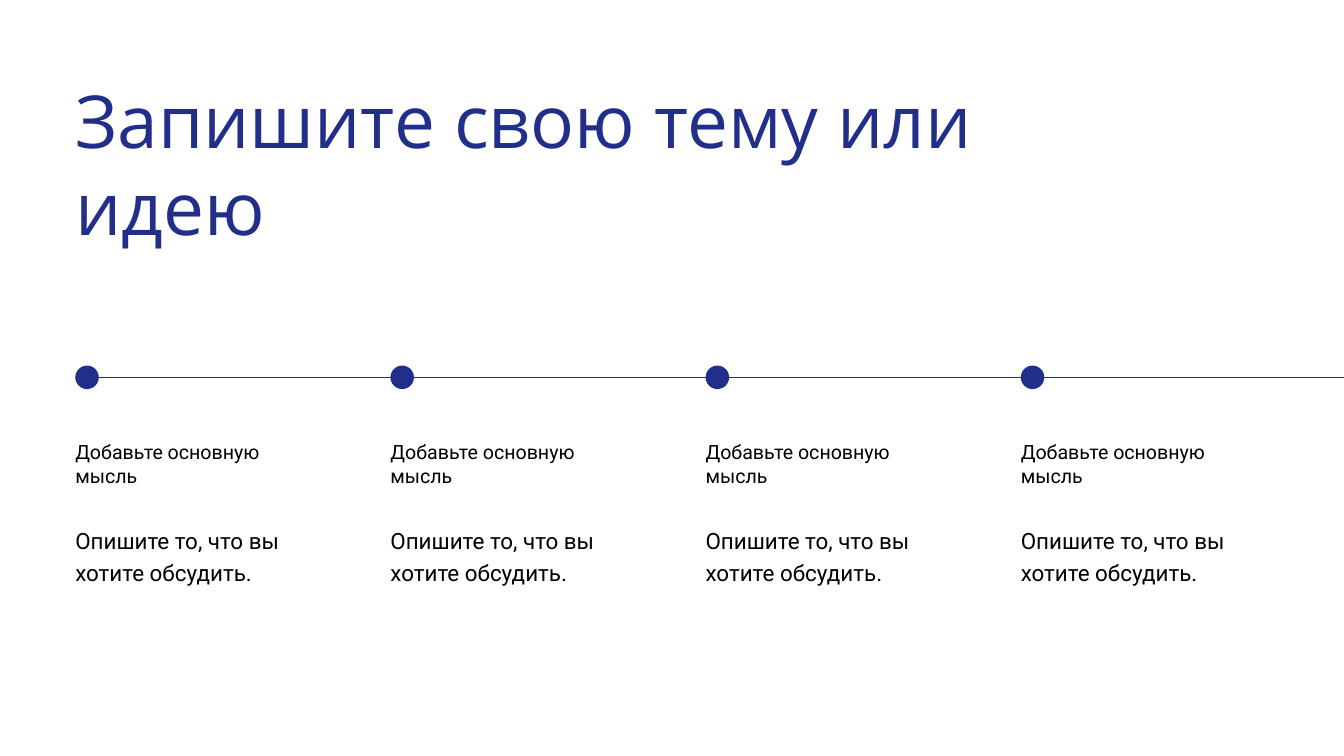
from dataclasses import dataclass

from lxml import etree
from pptx import Presentation
from pptx.dml.color import RGBColor
from pptx.enum.shapes import MSO_CONNECTOR, MSO_SHAPE
from pptx.enum.text import MSO_ANCHOR, MSO_AUTO_SIZE, PP_ALIGN
from pptx.oxml.ns import qn
from pptx.util import Inches, Pt

STRAIGHT = MSO_CONNECTOR.STRAIGHT
OVAL = MSO_SHAPE.OVAL
TOP = MSO_ANCHOR.TOP
NO_AUTOFIT = MSO_AUTO_SIZE.NONE
LEFT = PP_ALIGN.LEFT


@dataclass(frozen=True)
class Theme:
    """Colours, fonts and type sizes of the slide."""
    accent: RGBColor = RGBColor(0x21, 0x2F, 0x8A)
    text: RGBColor = RGBColor(0, 0, 0)
    background: RGBColor = RGBColor(255, 255, 255)
    title_font: str = "Open Sans"
    body_font: str = "Roboto"
    title_size: float = 78.2
    title_leading: float = 93.8
    heading_size: float = 21
    heading_leading: float = 25.2
    detail_size: float = 24
    detail_leading: float = 33.6
    line_width: float = 0.75


THEME = Theme()
SLIDE_W, SLIDE_H = 20, 11.25
MARGIN = 1.12
COLUMN_STEP, COLUMN_W = 4.69, 3.68
DOT = 0.35
STEPS = [("Добавьте основную мысль", "Опишите то, что вы хотите обсудить.")] * 4


def write_text(sp, text, *, font, size, leading, color):
    """Fill a shape with one formatted paragraph and no inner margins."""
    tf = sp.text_frame
    tf.word_wrap = True
    tf.auto_size = NO_AUTOFIT
    tf.vertical_anchor = TOP
    tf.margin_left = tf.margin_right = tf.margin_top = tf.margin_bottom = 0
    p = tf.paragraphs[0]
    p.alignment = LEFT
    p.line_spacing = Pt(leading)
    r = p.add_run()
    r.text = text
    r.font.name = font
    r.font.size = Pt(size)
    r.font.color.rgb = color


def add_title(slide, text, left, top, width, height):
    """Place the title placeholder in the given box."""
    sp = slide.shapes.title
    sp.left, sp.top = Inches(left), Inches(top)
    sp.width, sp.height = Inches(width), Inches(height)
    write_text(sp, text, font=THEME.title_font, size=THEME.title_size,
               leading=THEME.title_leading, color=THEME.accent)


def add_axis(slide, left, y, right):
    """Draw the horizontal line of the timeline."""
    line = slide.shapes.add_connector(
        STRAIGHT, Inches(left), Inches(y), Inches(right), Inches(y))
    line.line.color.rgb = THEME.accent
    line.line.width = Pt(THEME.line_width)
    etree.SubElement(line._element.spPr, qn("a:effectLst"))


def add_step(slide, heading, detail, left, top, width):
    """Place one timeline dot with its heading and detail below."""
    dot = slide.shapes.add_shape(
        OVAL, Inches(left), Inches(top), Inches(DOT), Inches(DOT))
    dot.shadow.inherit = False
    dot.fill.solid()
    dot.fill.fore_color.rgb = THEME.accent
    dot.line.fill.background()
    rows = [
        (heading, 1.11, 0.7, THEME.heading_size, THEME.heading_leading),
        (detail, 2.34, 0.9, THEME.detail_size, THEME.detail_leading),
    ]
    for text, offset, height, size, leading in rows:
        sp = slide.shapes.add_textbox(
            Inches(left), Inches(top + offset), Inches(width), Inches(height))
        write_text(sp, text, font=THEME.body_font, size=size,
                   leading=leading, color=THEME.text)


def add_timeline(slide, steps, left, top, right):
    """Lay out the axis and evenly spaced steps."""
    add_axis(slide, left, top + DOT / 2, right)
    for i, (heading, detail) in enumerate(steps):
        add_step(slide, heading, detail, left + i * COLUMN_STEP, top, COLUMN_W)


def main():
    """Build and save the presentation."""
    prs = Presentation()
    prs.slide_width, prs.slide_height = Inches(SLIDE_W), Inches(SLIDE_H)
    slide = prs.slides.add_slide(prs.slide_layouts.get_by_name("Title Only"))
    slide.background.fill.solid()
    slide.background.fill.fore_color.rgb = THEME.background
    add_title(slide, "Запишите свою тему или идею", MARGIN, MARGIN, 15.38, 2.6)
    add_timeline(slide, STEPS, MARGIN, 5.44, SLIDE_W)
    prs.save("out.pptx")


if __name__ == "__main__":
    main()
